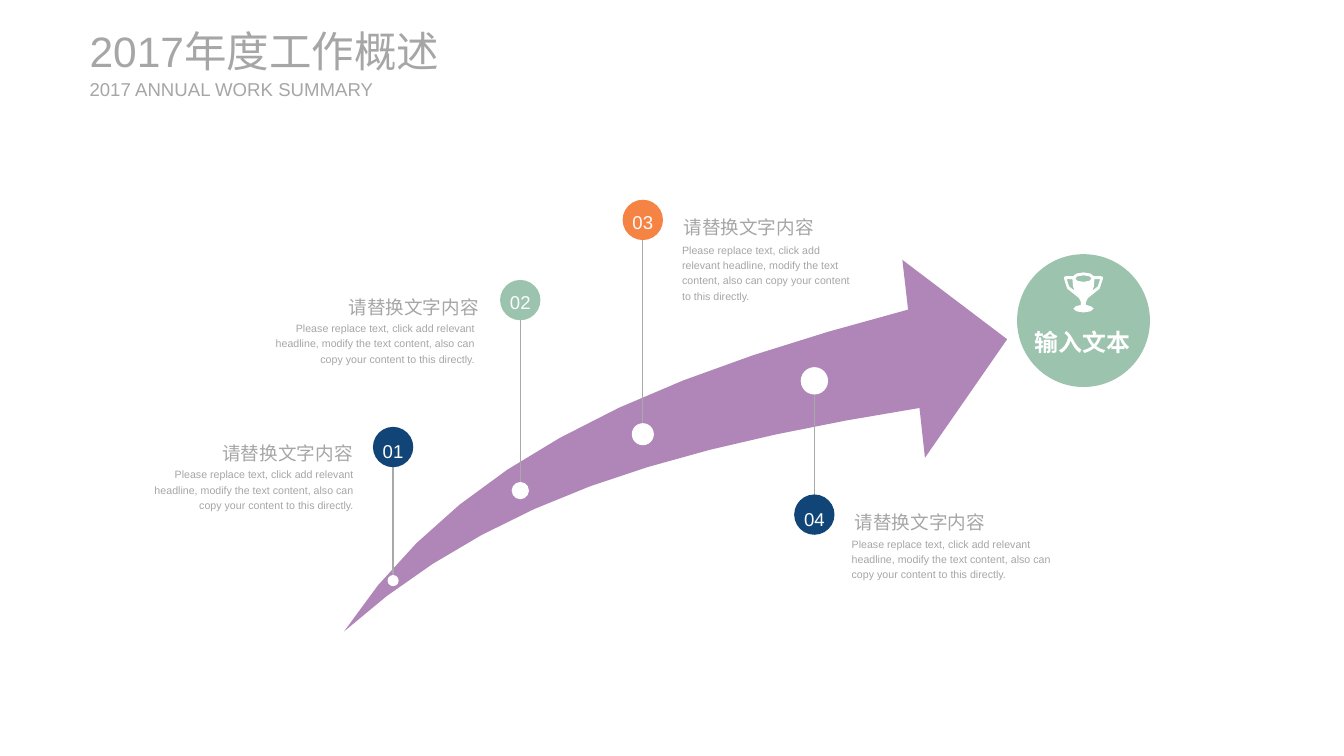
from dataclasses import dataclass

from lxml.etree import SubElement
from pptx import Presentation
from pptx.dml.color import RGBColor as Rgb
from pptx.enum.shapes import MSO_CONNECTOR as Link, MSO_SHAPE as Kind
from pptx.enum.text import MSO_ANCHOR as Anchor, MSO_AUTO_SIZE as Fit, PP_ALIGN as Align
from pptx.oxml.ns import qn
from pptx.util import Pt

Box = tuple[float, float, float, float]
Step = tuple[float, ...]  # two numbers: a point; six: a cubic curve
Spot = tuple[float, float]

HUES = {
    "purple": "B086B8", "navy": "114577", "green": "9CC3AE", "orange": "F58344",
    "white": "FFFFFF", "pale": "FCFCFC", "grey": "A6A6A6", "line": "A6AAA9",
}
FONT = "Arial"
HEAD = "请替换文字内容"
BODY = ("Please replace text, click add relevant headline, modify the text "
        "content, also can copy your content to this directly.")
BADGE = 30.4


@dataclass
class Stage:
    hue: str
    x: float
    badge: float
    label: float
    dot: float
    size: float
    head: Box
    body: Box
    align: Align


@dataclass
class Style:
    size: float
    hue: str = "grey"
    align: Align = Align.LEFT
    anchor: Anchor = Anchor.MIDDLE
    lead: float | None = 1.2
    before: float = 10
    bold: bool = False
    grow: bool = True


STAGES = [
    Stage("navy", 296.1, 336.8, 327.1, 437.4, 8.4, (151.2, 330.5, 114.5, 18.7),
          (103.8, 350.9, 162.7, 33.8), Align.RIGHT),
    Stage("green", 391.9, 226.1, 214.8, 369.6, 13, (236.9, 220.3, 123.8, 18.7),
          (195.1, 240.8, 162.7, 33.8), Align.RIGHT),
    Stage("orange", 484.2, 165.7, 154.8, 327.1, 16.6, (514.8, 159.5, 105.8, 20.2),
          (513.8, 181.7, 134.6, 45.4), Align.LEFT),
    Stage("navy", 613.4, 387.7, 378, 286.9, 20.6, (643.7, 381.6, 105.8, 20.2),
          (641.5, 403.2, 162.7, 33.8), Align.LEFT),
]

ARROW: list[Step] = [
    (259.2, 475.7), (298.8, 415.4, 352.8, 367.9, 421.9, 329.8),
    (492.5, 290.2, 580.3, 260.6, 684, 233.3), (679.7, 195.8), (758.6, 255.6),
    (696.7, 344.9), (692.6, 307.4), (597.6, 322.6, 514.8, 340.6, 444.2, 366.5),
    (372.2, 393.1, 311, 429.1, 259.2, 475.7),
]

# Right halves of the trophy, measured from its top centre
CUP: list[Step] = [
    (0, 0), (4.6, 0, 7, 1.4, 7.9, 2.9), (13.2, 2.9),
    (14.1, 2.9, 14.8, 3.4, 14.8, 4.3), (14.8, 11.5, 10.5, 14.4, 6.8, 16.6),
    (3.9, 18.7, 1.9, 20.2, 1.9, 22.3), (1.9, 24.5),
    (4.8, 25.2, 7.6, 25.9, 7.6, 27.4), (7.6, 28.8, 4, 30.2, 0, 30.2),
]
RIM: list[Step] = [(0, 2.2), (4.3, 2.2, 6.1, 3.6, 6.1, 4.6),
                   (6.1, 5.6, 4.3, 7.2, 0, 7.2)]
GRIP: list[Step] = [(8.3, 5), (12.6, 5), (12.6, 10, 9.7, 12.2, 6.8, 13.7),
                    (7.6, 12.2, 8.3, 9.4, 8.3, 5)]


def trace(steps: list[Step], parts: int = 2) -> list[Spot]:
    """Turn points and cubic curves into a list of points."""
    spots: list[Spot] = []
    for step in steps:
        if len(step) == 2:
            spots.append(step)
            continue
        knots = [spots[-1], step[:2], step[2:4], step[4:]]
        for i in range(1, parts + 1):
            t = i / parts
            mix = ((1 - t) ** 3, 3 * t * (1 - t) ** 2, 3 * t * t * (1 - t), t ** 3)
            spots.append(tuple(sum(m * k[a] for m, k in zip(mix, knots)) for a in (0, 1)))
    return spots


def flip(spots: list[Spot]) -> list[Spot]:
    return [(-x, y) for x, y in reversed(spots)]


def join(half: list[Spot]) -> list[Spot]:
    """Close a half outline with its mirror, sharing the points on the axis."""
    return half + flip(half)[1:-1]


def paint(shape, hue: str) -> None:
    shape.shadow.inherit = False
    shape.fill.solid()
    shape.fill.fore_color.rgb = Rgb.from_string(HUES[hue])
    shape.line.fill.background()


def draw(shapes, loops: list[list[Spot]], hue: str, x: float = 0, y: float = 0) -> None:
    rings = [[(Pt(x + a), Pt(y + b)) for a, b in loop] for loop in loops]
    pen = shapes.build_freeform(*rings[0][0])
    pen.add_line_segments(rings[0][1:], close=True)
    for ring in rings[1:]:
        pen.move_to(*ring[0])
        pen.add_line_segments(ring[1:], close=True)
    paint(pen.convert_to_shape(), hue)


def disc(shapes, x: float, y: float, size: float, hue: str) -> None:
    spot = shapes.add_shape(Kind.OVAL, Pt(x - size / 2), Pt(y - size / 2), Pt(size), Pt(size))
    paint(spot, hue)


def stem(shapes, x: float, top: float, end: float) -> None:
    line = shapes.add_connector(Link.STRAIGHT, Pt(x), Pt(top), Pt(x), Pt(end))
    line.line.color.rgb = Rgb.from_string(HUES["line"])
    line.line.width = Pt(1)
    SubElement(line._element.spPr, qn("a:effectLst"))


def write(shapes, box: Box, text: str, style: Style) -> None:
    frame = shapes.add_textbox(*map(Pt, box)).text_frame
    frame.text = text
    frame.word_wrap = True
    frame.auto_size = Fit.SHAPE_TO_FIT_TEXT if style.grow else Fit.NONE
    frame.vertical_anchor = style.anchor
    frame.margin_left = frame.margin_right = frame.margin_top = frame.margin_bottom = 0
    para = frame.paragraphs[0]
    para.alignment = style.align
    para.line_spacing = style.lead
    para.space_before = Pt(style.before)
    font = para.runs[0].font
    font.name, font.size, font.bold = FONT, Pt(style.size), style.bold
    font.color.rgb = Rgb.from_string(HUES[style.hue])


def main() -> None:
    deck = Presentation()
    deck.slide_width, deck.slide_height = Pt(1012.32), Pt(569.52)
    shapes = deck.slides.add_slide(deck.slide_layouts[6]).shapes

    # Title
    write(shapes, (67.5, 18.7, 311, 38.9), "2017年度工作概述", Style(32, lead=None, before=0))
    write(shapes, (67.5, 58.3, 221, 17.3), "2017 ANNUAL WORK SUMMARY",
          Style(14, lead=None, before=0))

    # Growth arrow
    draw(shapes, [trace(ARROW, 5)[:-1]], "purple")

    # Stages along the arrow
    for num, s in enumerate(STAGES, 1):
        stem(shapes, s.x, s.dot, s.badge)
        disc(shapes, s.x, s.badge, BADGE, s.hue)
        disc(shapes, s.x, s.dot, s.size, "white")
        write(shapes, (s.x - 9.4, s.label, 18.8, 22.3), f"{num:02}",
              Style(14, "pale", Align.CENTER, grow=False))
        write(shapes, s.head, HEAD, Style(14, align=s.align))
        write(shapes, s.body, BODY, Style(8, align=s.align, anchor=Anchor.TOP))

    # Goal with trophy
    mid = 816.1
    disc(shapes, mid, 241.5, 100.1, "green")
    cup, rim, grip = map(trace, (CUP, RIM, GRIP))
    draw(shapes, [join(cup), join(rim), grip, flip(grip)], "white", mid, 205.2)
    write(shapes, (778.8, 239.8, 73.4, 29.5), "输入文本",
          Style(18, "white", Align.CENTER, lead=1.3, bold=True, grow=False))

    deck.save("out.pptx")


if __name__ == "__main__":
    main()
